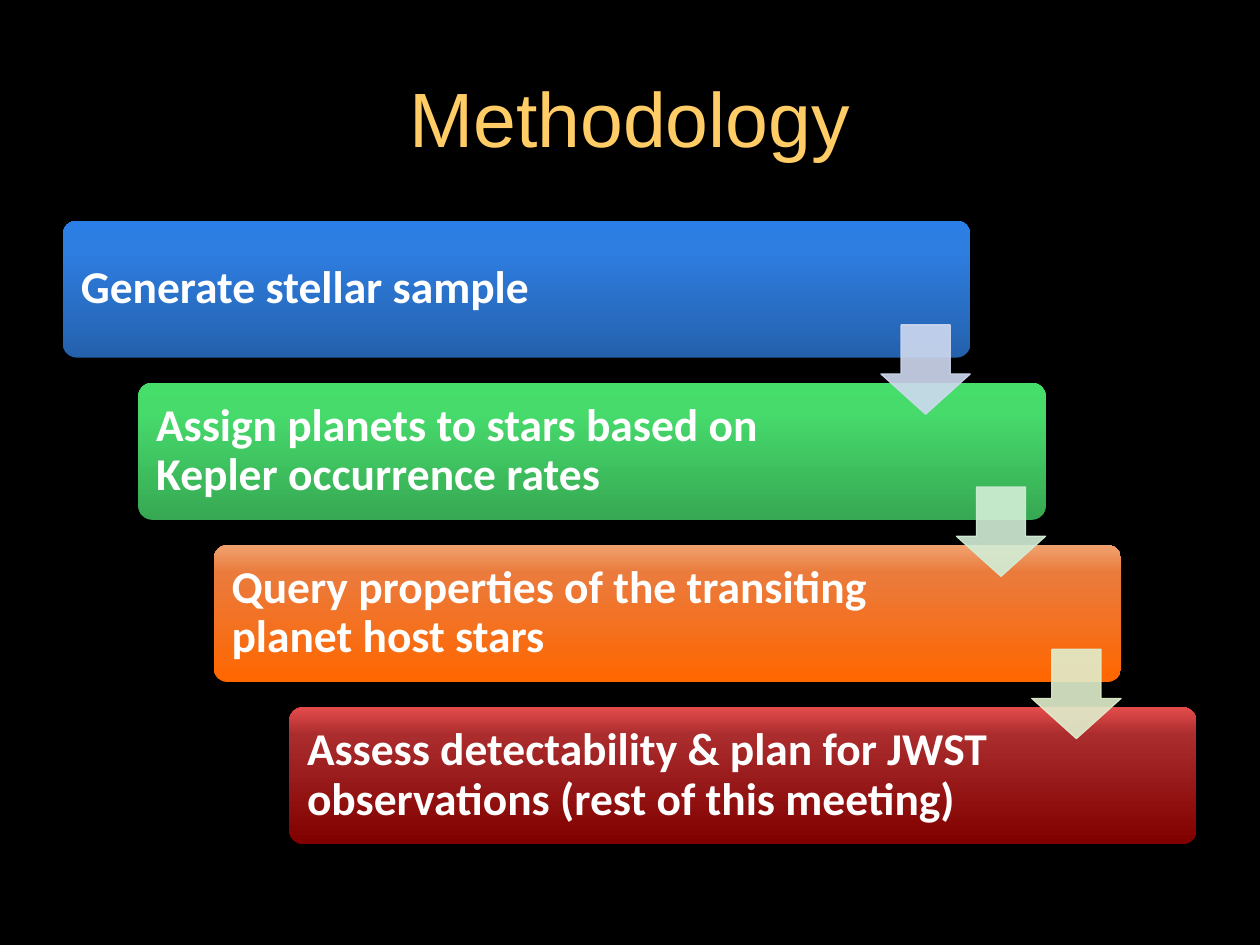
from copy import deepcopy
from dataclasses import dataclass

from lxml import etree
from pptx import Presentation
from pptx import util as u
from pptx.dml.color import RGBColor
from pptx.enum import shapes, text
from pptx.oxml.ns import qn

# Content: step wording, gradient from bottom to top
TITLE = "Methodology"
STEPS = [
    ("Generate stellar sample", ("2461AD", "2E7EE1", "2B7EE6")),
    ("Assign planets to stars based on Kepler occurrence rates",
     ("37A853", "47DB6C", "45DE6B")),
    ("Query properties of the transiting planet host stars",
     ("FF6600", "EA7B3D", "F0A16E")),
    ("Assess detectability & plan for JWST observations (rest of this meeting)",
     ("800000", "AB2C2D", "E44C4C")),
]
ARROW_COLOURS = ["CFD9EF", "D2EED6", "E1EECD"]


@dataclass(frozen=True)
class Theme:
    background: str = "000000"
    title_colour: str = "FFCC66"
    title_font: str = "Arial"
    title_size: int = 44
    step_colour: str = "FFFFFF"
    step_font: str = "Calibri"
    step_size: int = 26
    stops: tuple = (0, 0.8, 1)
    arrow_opacity: int = 90


THEME = Theme()

# Staircase geometry in centimetres
LEFT, TOP = 1.27, 4.45
STEP_X, STEP_Y = 1.52, 3.27
BAR_W, BAR_H = 18.29, 2.76
LABEL_W, LABEL_INSET, LABEL_MARGIN = 14.81, 0.08, 0.28
ARROW, ARROW_DROP = 1.8, 2.1


def rgb(colour):
    return RGBColor.from_string(colour)


def add_shape(page, kind, area, adjustments):
    shape = page.shapes.add_shape(kind, *map(u.Cm, area))
    shape.shadow.inherit = False
    for index, value in enumerate(adjustments):
        shape.adjustments[index] = value
    return shape


def add_text(page, area, words, font, size, colour, bold=False, margin=0.25):
    box = page.shapes.add_textbox(*map(u.Cm, area))
    frame = box.text_frame
    frame.word_wrap = True
    frame.vertical_anchor = text.MSO_ANCHOR.MIDDLE
    frame.margin_left = frame.margin_right = u.Cm(margin)
    frame.margin_top = frame.margin_bottom = u.Cm(margin)
    para = frame.paragraphs[0]
    span = para.add_run()
    span.text = words
    span.font.name = font
    span.font.size = u.Pt(size)
    span.font.bold = bold
    span.font.color.rgb = rgb(colour)
    return para


def add_bar(page, left, top, words, colours):
    bar = add_shape(page, shapes.MSO_SHAPE.ROUNDED_RECTANGLE,
                    (left, top, BAR_W, BAR_H), [0.1])
    bar.line.fill.background()
    bar.fill.gradient()
    bar.fill.gradient_angle = 90
    # The default gradient has two stops; add the third
    stop_list = next(bar._element.spPr.iter(qn("a:gsLst")))
    stop_list.append(deepcopy(stop_list[-1]))
    for stop, position, colour in zip(bar.fill.gradient_stops, THEME.stops, colours):
        stop.position = position
        stop.color.rgb = rgb(colour)

    label = (left + LABEL_INSET, top + LABEL_INSET,
             LABEL_W, BAR_H - 2 * LABEL_INSET)
    para = add_text(page, label, words, THEME.step_font, THEME.step_size,
                    THEME.step_colour, bold=True, margin=LABEL_MARGIN)
    para.line_spacing = 0.9


def add_arrow(page, left, top, colour):
    arrow = add_shape(page, shapes.MSO_SHAPE.DOWN_ARROW,
                      (left, top, ARROW, ARROW), [0.55, 0.45])
    arrow.line.width = u.Pt(0.75)
    for fill in (arrow.fill, arrow.line.fill):
        fill.solid()
        fill.fore_color.rgb = rgb(colour)
    for node in arrow._element.spPr.iter(qn("a:srgbClr")):
        alpha = etree.SubElement(node, qn("a:alpha"))
        alpha.set("val", str(THEME.arrow_opacity * 1000))


def main():
    deck = Presentation()
    deck.slide_width, deck.slide_height = u.Cm(25.4), u.Cm(19.05)
    page = deck.slides.add_slide(deck.slide_layouts[6])
    page.background.fill.solid()
    page.background.fill.fore_color.rgb = rgb(THEME.background)

    # Title
    heading = add_text(page, (1.27, 0.76, 22.86, 3.18), TITLE, THEME.title_font,
                       THEME.title_size, THEME.title_colour)
    heading.alignment = text.PP_ALIGN.CENTER

    # Staircase of steps
    corners = [(LEFT + i * STEP_X, TOP + i * STEP_Y) for i in range(len(STEPS))]
    for (left, top), (words, colours) in zip(corners, STEPS):
        add_bar(page, left, top, words, colours)

    # Arrows, flush with the right edge of the bar they leave
    for (left, top), colour in zip(corners, ARROW_COLOURS):
        add_arrow(page, left + BAR_W - ARROW, top + ARROW_DROP, colour)

    deck.save("out.pptx")


if __name__ == "__main__":
    main()
